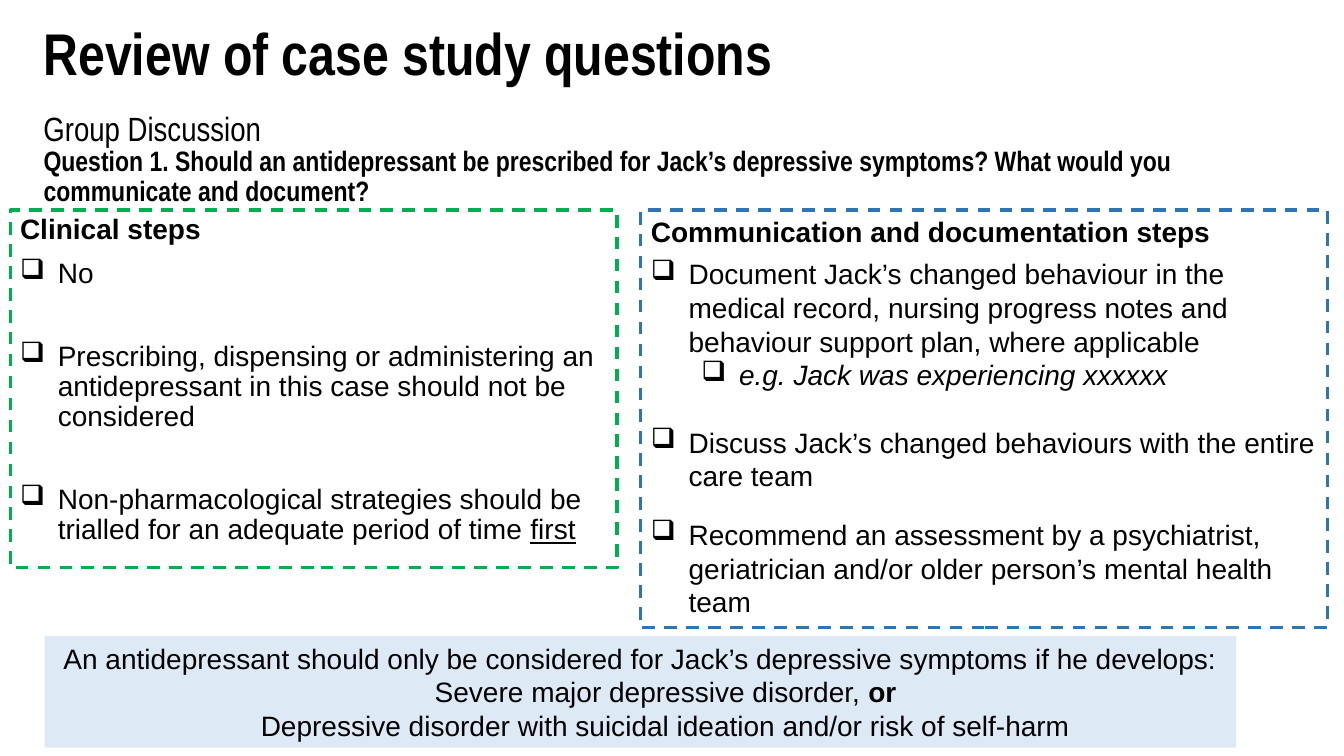
from dataclasses import dataclass

from lxml.etree import SubElement
from pptx import Presentation
from pptx.dml.color import RGBColor
from pptx.enum.dml import MSO_LINE
from pptx.enum.shapes import MSO_SHAPE
from pptx.enum.text import MSO_ANCHOR, MSO_AUTO_SIZE, PP_ALIGN
from pptx.oxml.ns import qn
from pptx.util import Inches, Length, Pt

COLS, ROWS = 160, 90  # grid cells across and down the slide


@dataclass(frozen=True)
class Theme:
    ink: str = "000000"
    green: str = "00B050"
    blue: str = "2E75B5"
    pale: str = "DDEAF6"
    head: str = "Arial Narrow"
    body: str = "Arial"
    title: float = 42
    sub: float = 24
    text: float = 20
    edge: float = 2.25
    mark: str = "❑"
    hang: float = 4.5  # bullet indent, in columns


@dataclass(frozen=True)
class Run:
    text: str
    bold: bool = False
    italic: bool = False
    underline: bool = False


@dataclass(frozen=True)
class Para:
    runs: tuple[Run, ...]
    gap: float = 0  # points before
    left: float = 0  # indent in columns
    mark: bool = False
    level: int = 0


@dataclass(frozen=True)
class Box:
    area: tuple[float, float, float, float]  # column, row, columns, rows
    paras: tuple[Para, ...]
    face: str
    size: float
    pitch: float = 1.0
    fill: str = ""
    line: str = ""
    align: PP_ALIGN = PP_ALIGN.LEFT
    anchor: MSO_ANCHOR = MSO_ANCHOR.TOP
    fit: MSO_AUTO_SIZE = MSO_AUTO_SIZE.NONE


LOOK = Theme()
deck = Presentation()
deck.slide_width, deck.slide_height = Inches(13.33), Inches(7.5)
slide = deck.slides.add_slide(deck.slide_layouts[6])


def across(cols: float) -> Length:
    return Length(round(deck.slide_width * cols / COLS))


def down(rows: float) -> Length:
    return Length(round(deck.slide_height * rows / ROWS))


def plain(text: str, bold: bool = False) -> Para:
    return Para((Run(text, bold),))


def item(*runs: Run, gap: float = 0, level: int = 0) -> Para:
    return Para(runs, gap, LOOK.hang + 6 * level, True, level)


def assign(target, values: dict) -> None:
    for name, value in values.items():
        setattr(target, name, value)


def write(para, data: Para, box: Box) -> None:
    assign(para, {"alignment": box.align, "line_spacing": box.pitch,
                  "space_before": Pt(data.gap), "level": data.level})
    props = para._p.get_or_add_pPr()
    props.set("marL", str(across(data.left)))
    props.set("indent", str(-across(LOOK.hang) if data.mark else 0))
    if data.mark:
        tint = SubElement(props, qn("a:buClr"))
        SubElement(tint, qn("a:srgbClr"), val=LOOK.ink)
        SubElement(props, qn("a:buChar"), char=LOOK.mark)
    else:
        SubElement(props, qn("a:buNone"))
    for part in data.runs:
        run = para.add_run()
        run.text = part.text
        assign(run.font, {"name": box.face, "size": Pt(box.size),
                          "bold": part.bold, "italic": part.italic,
                          "underline": part.underline})
        run.font.color.rgb = RGBColor.from_string(LOOK.ink)


def draw(box: Box) -> None:
    x, y, w, h = box.area
    place = across(x), down(y), across(w), down(h)
    if box.fill or box.line:
        shape = slide.shapes.add_shape(MSO_SHAPE.RECTANGLE, *place)
        shape.shadow.inherit = False
        if box.fill:
            shape.fill.solid()
            shape.fill.fore_color.rgb = RGBColor.from_string(box.fill)
        else:
            shape.fill.background()
        if box.line:
            shape.line.color.rgb = RGBColor.from_string(box.line)
            assign(shape.line, {"width": Pt(LOOK.edge),
                                "dash_style": MSO_LINE.DASH})
        else:
            shape.line.fill.background()
    else:
        shape = slide.shapes.add_textbox(*place)
    frame = shape.text_frame
    assign(frame, {"word_wrap": True, "auto_size": box.fit,
                   "vertical_anchor": box.anchor})
    for i, data in enumerate(box.paras):
        write(frame.add_paragraph() if i else frame.paragraphs[0], data, box)


GROW = MSO_AUTO_SIZE.SHAPE_TO_FIT_TEXT
BOXES = (
    # Headings
    Box((4, 2.4, 144.5, 9.5), (plain("Review of case study questions", True),),
        LOOK.head, LOOK.title, 0.9),
    Box((4, 12.85, 97.8, 6.1), (plain("Group Discussion"),),
        LOOK.head, LOOK.sub, 0.9),
    Box((4, 16.9, 141.85, 5.3), (plain(
        "Question 1. Should an antidepressant be prescribed for Jack’s "
        "depressive symptoms? What would you communicate and document?",
        True),), LOOK.head, LOOK.text, 0.9),
    # Clinical steps
    Box((1.2, 25, 72.25, 42.6), (
        plain("Clinical steps", True),
        item(Run("No"), gap=10),
        item(Run("Prescribing, dispensing or administering an antidepressant "
                 "in this case should not be considered"), gap=37.5),
        item(Run("Non-pharmacological strategies should be trialled for an "
                 "adequate period of time "),
             Run("first", underline=True), gap=37.5),
    ), LOOK.body, LOOK.text, 0.9, line=LOOK.green),
    # Communication steps
    Box((76.3, 25, 81.75, 49.7), (
        plain("Communication and documentation steps", True),
        item(Run("Document Jack’s changed behaviour in the medical record, "
                 "nursing progress notes and behaviour support plan, where "
                 "applicable"), gap=6),
        item(Run("e.g. Jack was experiencing xxxxxx", italic=True), level=1),
        item(Run("Discuss Jack’s changed behaviours with the entire care "
                 "team"), gap=24),
        item(Run("Recommend an assessment by a psychiatrist, geriatrician "
                 "and/or older person’s mental health team"), gap=18),
    ), LOOK.body, LOOK.text, line=LOOK.blue, fit=GROW),
    # Conclusion
    Box((5.3, 75.7, 141.85, 13.3), (
        plain("An antidepressant should only be considered for Jack’s "
              "depressive symptoms if he develops:"),
        Para((Run("Severe major depressive disorder, "), Run("or", True)),
             left=6, level=1),
        Para((Run("Depressive disorder with suicidal ideation and/or risk of "
                  "self-harm"),), left=6, level=1),
    ), LOOK.body, LOOK.text, fill=LOOK.pale, align=PP_ALIGN.CENTER,
        anchor=MSO_ANCHOR.MIDDLE, fit=GROW),
)

for box in BOXES:
    draw(box)
deck.save("out.pptx")
